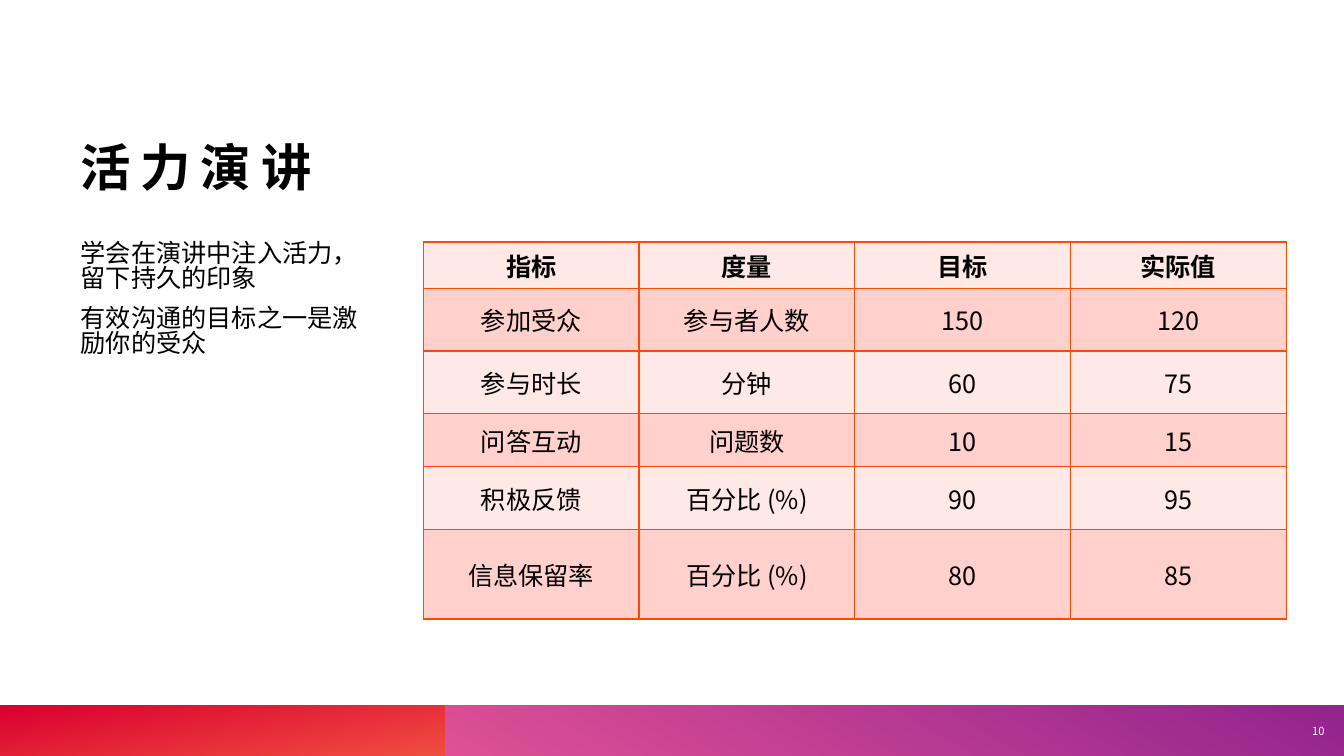
from lxml.etree import SubElement as Sub
from pptx import Presentation
from pptx.dml.color import RGBColor as Rgb
from pptx.enum.shapes import MSO_SHAPE as Kind
from pptx.enum.text import MSO_ANCHOR as Anchor, MSO_AUTO_SIZE as Auto, PP_ALIGN as Align
from pptx.oxml.ns import qn
from pptx.util import Pt

FONT = "Noto Sans CJK SC"
HEX = {
    "black": "000000", "white": "FFFFFF", "line": "FE4A00",
    "pale": "FFE9E7", "rose": "FFD0CC",
    "coral": "F04E40", "red": "DA002F", "pink": "DF5096", "plum": "92248E",
}
TITLE = "活力演讲"
POINTS = ["学会在演讲中注入活力，留下持久的印象", "有效沟通的目标之一是激励你的受众"]
ROWS = [
    ["指标", "度量", "目标", "实际值"],
    ["参加受众", "参与者人数", "150", "120"],
    ["参与时长", "分钟", "60", "75"],
    ["问答互动", "问题数", "10", "15"],
    ["积极反馈", "百分比 (%)", "90", "95"],
    ["信息保留率", "百分比 (%)", "80", "85"],
]
HIGHS = [30.24, 44.64, 44.64, 38.16, 44.64, 64.08]
WIDE = 154.08


def tint(name):
    return Rgb.from_string(HEX[name])


def style(para, size, color="black", bold=False, align=Align.LEFT, track=0):
    para.alignment = align
    font = para.font
    font.size, font.bold, font.name = Pt(size), bold, FONT
    font.color.rgb = tint(color)
    props = font._rPr
    Sub(props, qn("a:ea")).set("typeface", FONT)
    if track:
        props.set("spc", str(track * 100))


def place(shape, left, top, width, height):
    shape.left, shape.top = Pt(left), Pt(top)
    shape.width, shape.height = Pt(width), Pt(height)


def frame(shape, anchor):
    text = shape.text_frame
    text.auto_size, text.word_wrap = Auto.NONE, True
    text.vertical_anchor = anchor
    text.margin_left = text.margin_right = text.margin_top = text.margin_bottom = 0
    return text


def band(slide, left, width, start, end, angle):
    bar = slide.shapes.add_shape(Kind.RECTANGLE, Pt(left), Pt(504), Pt(width), Pt(36))
    bar.shadow.inherit = False
    bar.line.fill.background()
    bar.fill.gradient()
    bar.fill.gradient_angle = angle
    for stop, name, spot in zip(bar.fill.gradient_stops, (start, end), (0, 1)):
        stop.color.rgb = tint(name)
        stop.position = spot


def title(slide):
    shape = slide.shapes.title
    place(shape, 57.6, 43.2, 860.4, 97.2)
    text = frame(shape, Anchor.BOTTOM)
    text.text = TITLE
    style(text.paragraphs[0], 36, bold=True, track=7)


def body(slide):
    shape = slide.placeholders[1]
    place(shape, 57.6, 172.8, 207.36, 291.6)
    text = frame(shape, Anchor.TOP)
    text.text = "\n".join(POINTS)
    for para in text.paragraphs:
        style(para, 18)
        para.space_before = Pt(10)
        para.line_spacing = 0.84
        props = para._p.get_or_add_pPr()
        props.set("marL", "0")
        props.set("indent", "0")
        props.insert_element_before(props.makeelement(qn("a:buNone")), "a:defRPr")


def border(cell):
    props = cell._tc.get_or_add_tcPr()
    for side in ("lnL", "lnR", "lnT", "lnB"):
        line = Sub(props, qn("a:" + side))
        line.set("w", str(Pt(1)))
        Sub(Sub(line, qn("a:solidFill")), qn("a:srgbClr")).set("val", HEX["line"])


def grid(slide):
    table = slide.shapes.add_table(
        len(ROWS), len(ROWS[0]), Pt(302.4), Pt(172.8),
        Pt(WIDE * len(ROWS[0])), Pt(sum(HIGHS))).table
    table.first_row = table.horz_banding = False
    for col in table.columns:
        col.width = Pt(WIDE)
    for i, (words, high) in enumerate(zip(ROWS, HIGHS)):
        table.rows[i].height = Pt(high)
        for j, word in enumerate(words):
            cell = table.cell(i, j)
            border(cell)
            cell.fill.solid()
            cell.fill.fore_color.rgb = tint("rose" if i % 2 else "pale")
            cell.vertical_anchor = Anchor.MIDDLE
            cell.text = word
            style(cell.text_frame.paragraphs[0], 18, bold=i == 0, align=Align.CENTER)


def number(slide):
    box = slide.shapes.add_textbox(Pt(918.72), Pt(504.72), Pt(34.56), Pt(35.28))
    text = frame(box, Anchor.MIDDLE)
    text.margin_right = Pt(7.2)
    text.text = "10"
    style(text.paragraphs[0], 8, "white", align=Align.RIGHT)


def main():
    deck = Presentation()
    deck.slide_width, deck.slide_height = Pt(960), Pt(540)
    slide = deck.slides.add_slide(deck.slide_layouts[1])
    band(slide, 0, 318, "coral", "red", 100)
    band(slide, 318, 642, "pink", "plum", 60)
    title(slide)
    body(slide)
    grid(slide)
    number(slide)
    deck.save("out.pptx")


if __name__ == "__main__":
    main()
